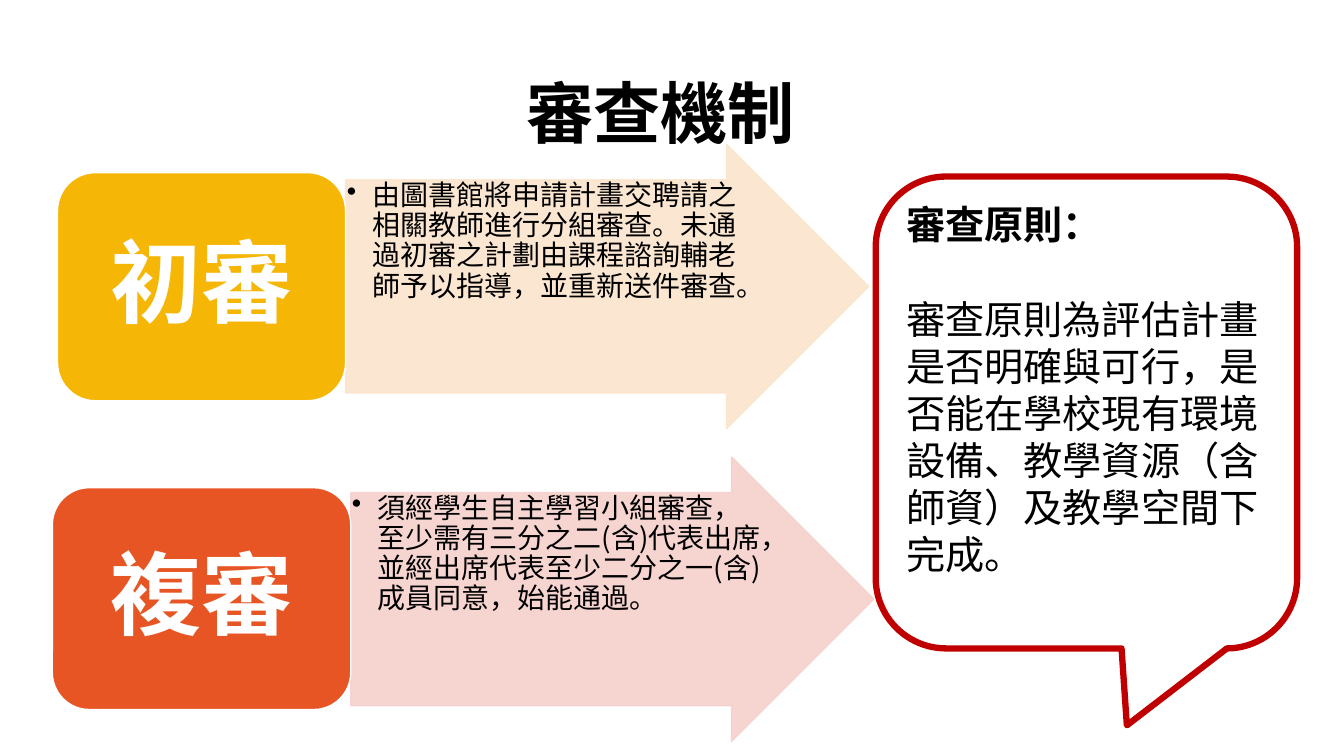
from dataclasses import dataclass
from typing import Any

from pptx import Presentation
from pptx.dml.color import RGBColor
from pptx.enum.shapes import MSO_SHAPE as Kind
from pptx.enum.text import MSO_ANCHOR as Anchor, PP_ALIGN as Align
from pptx.oxml.ns import qn
from pptx.util import Cm, Pt

COLORS = {
    "black": "000000", "white": "FFFFFF", "red": "C00000",
    "gold": "F5B605", "cream": "FBE5CC",
    "orange": "E75524", "pink": "F6D1CD",
}
SANS = "Noto Sans CJK SC"


@dataclass
class Box:
    left: float
    top: float
    width: float
    height: float

    def lengths(self) -> list[Cm]:
        return [Cm(v) for v in (self.left, self.top, self.width, self.height)]


@dataclass
class Stage:
    label: str
    body: str
    card: Box
    arrow: Box
    dark: str
    light: str


STAGES = [
    Stage("初審",
          "由圖書館將申請計畫交聘請之相關教師進行分組審查。未通過初審之計劃由課程諮詢輔老師予以指導，並重新送件審查。",
          Box(1.45, 4.35, 7.26, 5.75), Box(8.71, 3.64, 13.18, 7.16), "gold", "cream"),
    Stage("複審",
          "須經學生自主學習小組審查，至少需有三分之二(含)代表出席，並經出席代表至少二分之一(含)成員同意，始能通過。",
          Box(1.32, 12.29, 7.52, 5.59), Box(8.84, 11.52, 13.18, 7.16), "orange", "pink"),
]


def rgb(name: str) -> RGBColor:
    return RGBColor.from_string(COLORS[name])


def apply(target: Any, values: dict[str, Any]) -> None:
    for key, value in values.items():
        setattr(target, key, value)


def fade(fill: Any, name: str, alpha: int = 100) -> None:
    """Fill with a solid colour at an opacity in percent."""
    fill.solid()
    fill.fore_color.rgb = rgb(name)
    if alpha < 100:
        for node in fill._xPr.iter(qn("a:srgbClr")):
            if node.find(qn("a:alpha")) is None:
                node.makeelement(qn("a:alpha"))
                tag = node.makeelement(qn("a:alpha"), {"val": str(alpha * 1000)})
                node.append(tag)


def draw(slide: Any, kind: Kind, box: Box, fill: str | None, line: str,
         width: float = 1, alpha: int = 100, adjust: tuple[float, ...] = ()) -> Any:
    shape = slide.shapes.add_shape(kind, *box.lengths())
    shape.shadow.inherit = False
    fade(shape.line.fill, line, alpha)
    shape.line.width = Pt(width)
    if fill:
        fade(shape.fill, fill, alpha)
    else:
        shape.fill.background()
    for i, value in enumerate(adjust):
        shape.adjustments[i] = value
    return shape


def frame(shape: Any, margins: tuple[float, ...], **values: Any) -> Any:
    sides = ("left", "top", "right", "bottom")
    edges = {f"margin_{side}": Cm(v) for side, v in zip(sides, margins)}
    apply(shape.text_frame, {"word_wrap": True, **edges, **values})
    return shape.text_frame


def write(par: Any, text: str, size: float, font: str = SANS, color: str = "black",
          bold: bool = False, **values: Any) -> None:
    run = par.add_run()
    run.text = text
    apply(run.font, {"name": font, "size": Pt(size), "bold": bold})
    run.font.color.rgb = rgb(color)
    props = run.font._rPr
    props.append(props.makeelement(qn("a:ea"), {"typeface": font}))
    apply(par, values)


def bullet(par: Any, indent: float) -> None:
    props = par._p.get_or_add_pPr()
    props.set("marL", str(Cm(indent)))
    props.set("indent", str(-Cm(indent)))
    props.append(props.makeelement(qn("a:buChar"), {"char": "•"}))


def add_stage(slide: Any, stage: Stage) -> None:
    # Arrow with its bulleted text
    arrow = stage.arrow
    draw(slide, Kind.RIGHT_ARROW, arrow, stage.light, stage.light,
         alpha=90, adjust=(0.75, 0.5))
    area = Box(arrow.left, arrow.top + arrow.height / 8, 10.49, arrow.height * 0.75)
    note = slide.shapes.add_textbox(*area.lengths())
    par = frame(note, (0.03,) * 4).paragraphs[0]
    bullet(par, 0.64)
    write(par, stage.body, 20, line_spacing=0.9)

    # Card with the stage name
    card = draw(slide, Kind.ROUNDED_RECTANGLE, stage.card, stage.dark, "white")
    par = frame(card, (0.69, 0.36, 0.69, 0.36),
                vertical_anchor=Anchor.MIDDLE).paragraphs[0]
    write(par, stage.label, 65, "Calibri", "white", True,
          alignment=Align.CENTER, line_spacing=0.9)


def main() -> None:
    deck = Presentation()
    apply(deck, {"slide_width": Cm(33.87), "slide_height": Cm(19.05)})
    slide = deck.slides.add_slide(deck.slide_layouts[6])

    # Title
    title = slide.shapes.add_textbox(*Box(12.98, 1.68, 7.34, 2.31).lengths())
    par = frame(title, (0.25, 0.13, 0.25, 0.13), word_wrap=False).paragraphs[0]
    write(par, "審查機制", 48, "Noto Sans CJK JP", bold=True, alignment=Align.CENTER)

    # Review stages
    for stage in STAGES:
        add_stage(slide, stage)

    # Callout with the review principle
    call = draw(slide, Kind.ROUNDED_RECTANGULAR_CALLOUT, Box(22.07, 4.45, 10.62, 11.89),
                None, "red", 4.5, adjust=(0.096, 0.663, 0.167))
    text = frame(call, (0.25, 0.13, 0.25, 1.32), vertical_anchor=Anchor.MIDDLE)
    write(text.paragraphs[0], "審查原則：", 28, bold=True, alignment=Align.LEFT)
    write(text.add_paragraph(),
          "審查原則為評估計畫是否明確與可行，是否能在學校現有環境設備、教學資源（含師資）及教學空間下完成。",
          28, alignment=Align.LEFT, space_before=Pt(34))

    deck.save("out.pptx")


if __name__ == "__main__":
    main()
